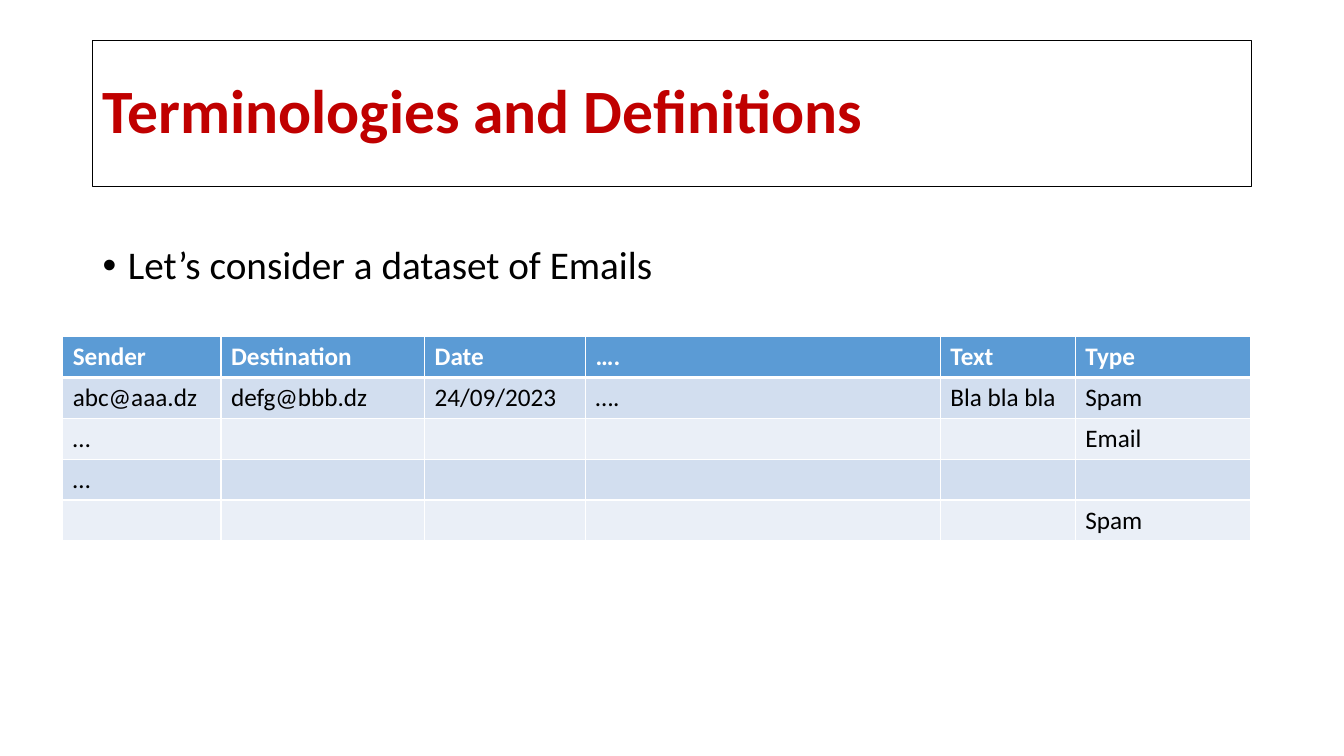
import dataclasses

import lxml.etree
import pptx
import pptx.dml.color
import pptx.enum.text
import pptx.oxml.ns
import pptx.util

Cm = pptx.util.Cm
Pt = pptx.util.Pt
qn = pptx.oxml.ns.qn


@dataclasses.dataclass(frozen=True)
class Theme:
    font: str = "Calibri"
    white: str = "FFFFFF"
    black: str = "000000"
    red: str = "C00000"
    header: str = "5B9BD5"
    bands: tuple = ("D2DEEF", "EAEFF7")
    title_size: int = 44
    body_size: int = 28
    table_size: int = 18
    thin: int = 1
    thick: int = 3


THEME = Theme()

COLUMN_WIDTHS = (3.99, 5.13, 4.06, 8.94, 3.4, 4.42)
ROW_HEIGHT = 1.03
EMAILS = (
    ("Sender", "Destination", "Date", "….", "Text", "Type"),
    ("abc@aaa.dz", "defg@bbb.dz", "24/09/2023", "….", "Bla bla bla", "Spam"),
    ("…", "", "", "", "", "Email"),
    ("…", "", "", "", "", ""),
    ("", "", "", "", "", "Spam"),
)


def rgb(color):
    return pptx.dml.color.RGBColor.from_string(color)


def place(box, left, top, width, height):
    box.left, box.top = Cm(left), Cm(top)
    box.width, box.height = Cm(width), Cm(height)


def add_span(para, text, size, color, bold=False):
    span = para.add_run()
    span.text = text
    span.font.name = THEME.font
    span.font.size = Pt(size)
    span.font.bold = bold
    span.font.color.rgb = rgb(color)


def start_text(box, anchor):
    """Prepare a placeholder frame and return its first paragraph."""
    frame = box.text_frame
    frame.word_wrap = True
    frame.auto_size = pptx.enum.text.MSO_AUTO_SIZE.NONE
    frame.vertical_anchor = anchor
    para = frame.paragraphs[0]
    para.alignment = pptx.enum.text.PP_ALIGN.LEFT
    para.line_spacing = 0.9
    return para


def fill_title(box, text):
    place(box, 2.33, 1.02, 29.21, 3.68)
    box.fill.solid()
    box.fill.fore_color.rgb = rgb(THEME.white)
    box.line.color.rgb = rgb(THEME.black)
    box.line.width = Pt(THEME.thin)
    para = start_text(box, pptx.enum.text.MSO_ANCHOR.MIDDLE)
    add_span(para, text, THEME.title_size, THEME.red, bold=True)


def fill_body(box, text):
    place(box, 2.33, 6.07, 29.21, 12.09)
    para = start_text(box, pptx.enum.text.MSO_ANCHOR.TOP)
    para.space_before = Pt(10)
    # Hanging bullet
    properties = para._p.get_or_add_pPr()
    properties.set("marL", str(Cm(0.64)))
    properties.set("indent", str(-Cm(0.64)))
    lxml.etree.SubElement(properties, qn("a:buFont")).set("typeface", "Arial")
    lxml.etree.SubElement(properties, qn("a:buChar")).set("char", "•")
    add_span(para, text, THEME.body_size, THEME.black)


def set_border(cell, side, width):
    line = lxml.etree.SubElement(cell._tc.get_or_add_tcPr(), qn(f"a:ln{side}"))
    line.set("w", str(Pt(width)))
    fill = lxml.etree.SubElement(line, qn("a:solidFill"))
    lxml.etree.SubElement(fill, qn("a:srgbClr")).set("val", THEME.white)


def fill_cell(cell, text, row):
    is_header = row == 0
    thick_side = {0: "B", 1: "T"}.get(row)
    for side in "LRTB":
        set_border(cell, side, THEME.thick if side == thick_side else THEME.thin)
    cell.fill.solid()
    cell.fill.fore_color.rgb = rgb(
        THEME.header if is_header else THEME.bands[(row - 1) % 2])
    if text:
        color = THEME.white if is_header else THEME.black
        add_span(cell.text_frame.paragraphs[0], text, THEME.table_size,
                 color, bold=is_header)


def add_email_table(page):
    table = page.shapes.add_table(
        len(EMAILS), len(COLUMN_WIDTHS), Cm(1.58), Cm(8.48),
        Cm(sum(COLUMN_WIDTHS)), Cm(ROW_HEIGHT * len(EMAILS))).table
    for column, width in zip(table.columns, COLUMN_WIDTHS):
        column.width = Cm(width)
    for row, texts in enumerate(EMAILS):
        table.rows[row].height = Cm(ROW_HEIGHT)
        for column, text in enumerate(texts):
            fill_cell(table.cell(row, column), text, row)


def main():
    deck = pptx.Presentation()
    deck.slide_width, deck.slide_height = Cm(33.87), Cm(19.05)
    page = deck.slides.add_slide(deck.slide_layouts[1])

    # Heading and bullet
    fill_title(page.shapes.title, "Terminologies and Definitions")
    fill_body(page.placeholders[1], "Let’s consider a dataset of Emails")

    # Dataset
    add_email_table(page)

    deck.save("out.pptx")


if __name__ == "__main__":
    main()
